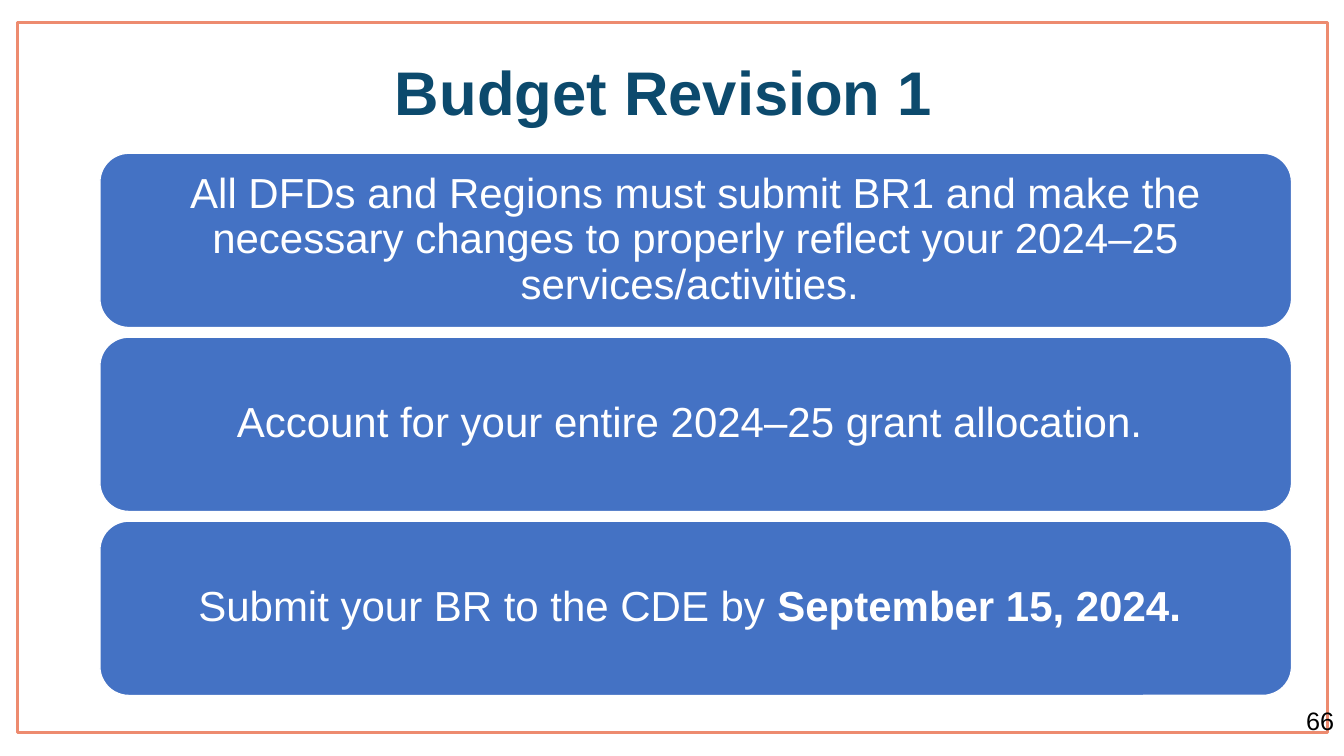
"""Build the Budget Revision 1 slide."""
from pptx import Presentation
from pptx.dml.color import RGBColor
from pptx.enum.shapes import MSO_SHAPE
from pptx.enum.text import MSO_ANCHOR, PP_ALIGN
from pptx.util import Inches, Pt

RECT, ROUND = MSO_SHAPE.RECTANGLE, MSO_SHAPE.ROUNDED_RECTANGLE
TOP, MIDDLE = MSO_ANCHOR.TOP, MSO_ANCHOR.MIDDLE
CENTER, RIGHT = PP_ALIGN.CENTER, PP_ALIGN.RIGHT
CORAL = RGBColor(0xED, 0x8B, 0x6F)
NAVY = RGBColor(0x0C, 0x4A, 0x6D)
BLUE = RGBColor(0x44, 0x72, 0xC4)
WHITE = RGBColor(0xFF, 0xFF, 0xFF)
BLACK = RGBColor(0, 0, 0)

CARDS = [
    [("All DFDs and Regions must submit BR1 and make the necessary changes "
      "to properly reflect your 2024–25 services/activities. ", False)],
    [("Account for your entire 2024–25 grant allocation. ", False)],
    [("Submit your BR to the CDE by ", False), ("September 15, 2024. ", True)],
]


def write(shape, runs, size, color, align, anchor, space, inset):
    frame = shape.text_frame
    form = {"word_wrap": True, "vertical_anchor": anchor,
            "margin_left": inset, "margin_right": inset}
    for name, value in form.items():
        setattr(frame, name, value)
    para = frame.paragraphs[0]
    para.alignment, para.line_spacing = align, space
    for text, bold in runs:
        run = para.add_run()
        run.text = text
        run.font.color.rgb = color
        for name, value in {"name": "Arial", "size": Pt(size), "bold": bold}.items():
            setattr(run.font, name, value)


def outline(shape, color, width):
    shape.shadow.inherit = False
    shape.line.color.rgb = color
    shape.line.width = Pt(width)


deck = Presentation()
deck.slide_width, deck.slide_height = Inches(13.33), Inches(7.5)
slide = deck.slides.add_slide(deck.slide_layouts[5])
shapes = slide.shapes

border = shapes.add_shape(RECT, Inches(0.17), Inches(0.22), Inches(13), Inches(7.05))
border.fill.background()
outline(border, CORAL, 2)

title = shapes.title
place = {"left": 0.17, "top": 0.22, "width": 13, "height": 1.45}
for name, value in place.items():
    setattr(title, name, Inches(value))
write(title, [("Budget Revision 1 ", True)], 44, NAVY, CENTER, MIDDLE, 0.9, Inches(0.1))

for row, runs in enumerate(CARDS):
    card = shapes.add_shape(ROUND, Inches(0.99), Inches(1.52 + row * 1.825),
                            Inches(11.82), Inches(1.73))
    card.fill.solid()
    card.fill.fore_color.rgb = BLUE
    outline(card, WHITE, 1)
    write(card, runs, 30, WHITE, CENTER, MIDDLE, 0.9, Inches(0.12))

number = shapes.add_textbox(Inches(10.22), Inches(6.95), Inches(3.11), Inches(0.4))
write(number, [("66", False)], 18, BLACK, RIGHT, TOP, 1.0, Inches(0.1))

deck.save("out.pptx")
